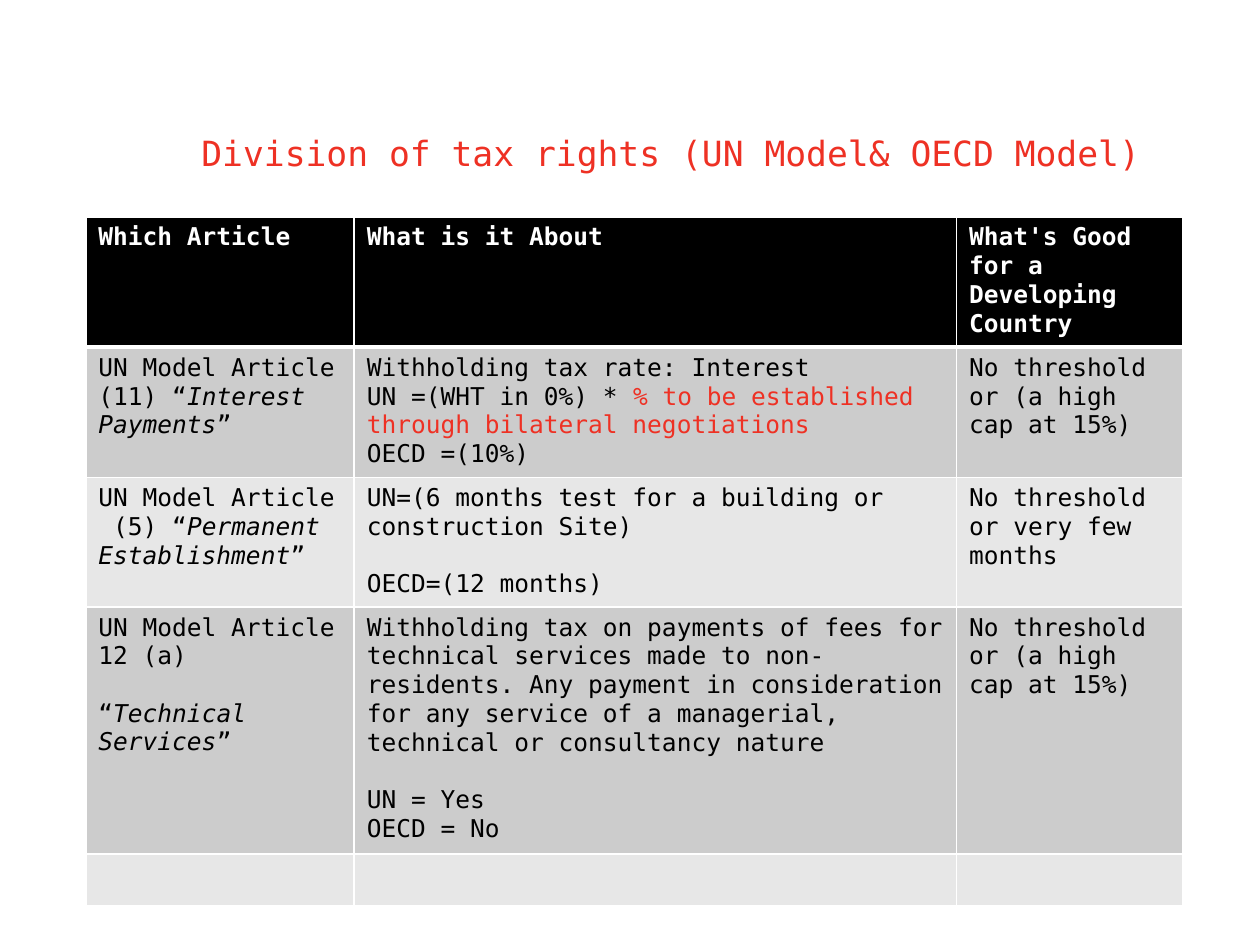
import pptx
import pptx.dml.color
import pptx.oxml
import pptx.oxml.ns
import pptx.util
from pptx.util import Cm

THEME = {
    "font": "DejaVu Sans Mono",
    "red": "EE3124",
    "black": "000000",
    "white": "FFFFFF",
    "bands": ["CCCCCC", "E7E7E7"],
    "title_size": 19.8,
    "table_size": 14,
    "blank_line": 16.3,
}


def rgb(value):
    return pptx.dml.color.RGBColor.from_string(value)


def add_text(p, text, size=THEME["table_size"], color=THEME["black"], bold=False, italic=False):
    r = p.add_run()
    r.text = text
    r.font.name = THEME["font"]
    r.font.size = pptx.util.Pt(size)
    r.font.color.rgb = rgb(color)
    r.font.bold = bold
    r.font.italic = italic


prs = pptx.Presentation()
prs.slide_width = Cm(25.4)
prs.slide_height = Cm(19.05)
s = prs.slides.add_slide(prs.slide_layouts[6])

sp = s.shapes.add_textbox(Cm(4.06), Cm(2.44), Cm(21.74), Cm(1.3))
tf = sp.text_frame
tf.word_wrap = True
tf.margin_left = tf.margin_right = tf.margin_top = tf.margin_bottom = 0
p = tf.paragraphs[0]
p.line_spacing = pptx.util.Pt(30)
add_text(p, "Division of tax rights (UN Model& OECD Model)",
         size=THEME["title_size"], color=THEME["red"])

italic = {"italic": True}
red = {"color": THEME["red"]}
head = {"color": THEME["white"], "bold": True}
gap = THEME["blank_line"]

# Each cell is a list of (space before, runs); each run is (text, format).
rows = [
    [
        [(0, [("Which Article", head)])],
        [(0, [("What is it About", head)])],
        [(0, [("What's Good for a Developing Country", head)])],
    ],
    [
        [(0, [("UN Model Article (11) “", {}), ("Interest Payments", italic), ("”", {})])],
        [
            (0, [("Withholding tax rate: Interest", {})]),
            (0, [("UN =(WHT in 0%) * ", {}),
                 ("% to be established through bilateral negotiations", red)]),
            (0, [("OECD =(10%)", {})]),
        ],
        [(0, [("No threshold or (a high cap at 15%)", {})])],
    ],
    [
        [(0, [("UN Model Article  (5) “", {}), ("Permanent Establishment", italic), ("”", {})])],
        [
            (0, [("UN=(6 months test for a building or construction Site)", {})]),
            (gap, [("OECD=(12 months)", {})]),
        ],
        [(0, [("No threshold or very few months", {})])],
    ],
    [
        [
            (0, [("UN Model Article 12 (a)", {})]),
            (gap, [("“", {}), ("Technical Services", italic), ("”", {})]),
        ],
        [
            (0, [("Withholding tax on payments of fees for technical services made to "
                  "non-residents. Any payment in consideration for any service of a "
                  "managerial, technical or consultancy nature", {})]),
            (gap, [("UN = Yes", {})]),
            (0, [("OECD = No", {})]),
        ],
        [(0, [("No threshold or (a high cap at 15%)", {})])],
    ],
    [[], [], []],
]
widths = [5.41, 12.14, 4.57]
heights = [2.56, 2.56, 2.57, 4.89, 1.04]

table = s.shapes.add_table(len(rows), len(widths), Cm(1.73), Cm(4.37),
                           Cm(sum(widths)), Cm(sum(heights))).table
for column, width in zip(table.columns, widths):
    column.width = Cm(width)
for row, height in zip(table.rows, heights):
    row.height = Cm(height)

for i, row in enumerate(rows):
    fill = THEME["bands"][(i - 1) % 2] if i else THEME["black"]
    borders = {"L": 1, "R": 1, "T": 3 if i == 1 else 1, "B": 3 if i == 0 else 1}
    for j, paragraphs in enumerate(row):
        cell = table.cell(i, j)
        tc_pr = cell._tc.get_or_add_tcPr()
        for side, weight in borders.items():
            tc_pr.append(pptx.oxml.parse_xml(
                f'<a:ln{side} {pptx.oxml.ns.nsdecls("a")} w="{pptx.util.Pt(weight)}">'
                f'<a:solidFill><a:srgbClr val="{THEME["white"]}"/></a:solidFill></a:ln{side}>'))
        cell.fill.solid()
        cell.fill.fore_color.rgb = rgb(fill)
        tf = cell.text_frame
        for k, (before, runs) in enumerate(paragraphs):
            p = tf.add_paragraph() if k else tf.paragraphs[0]
            if before:
                p.space_before = pptx.util.Pt(before)
            for text, style in runs:
                add_text(p, text, **style)

prs.save("out.pptx")
